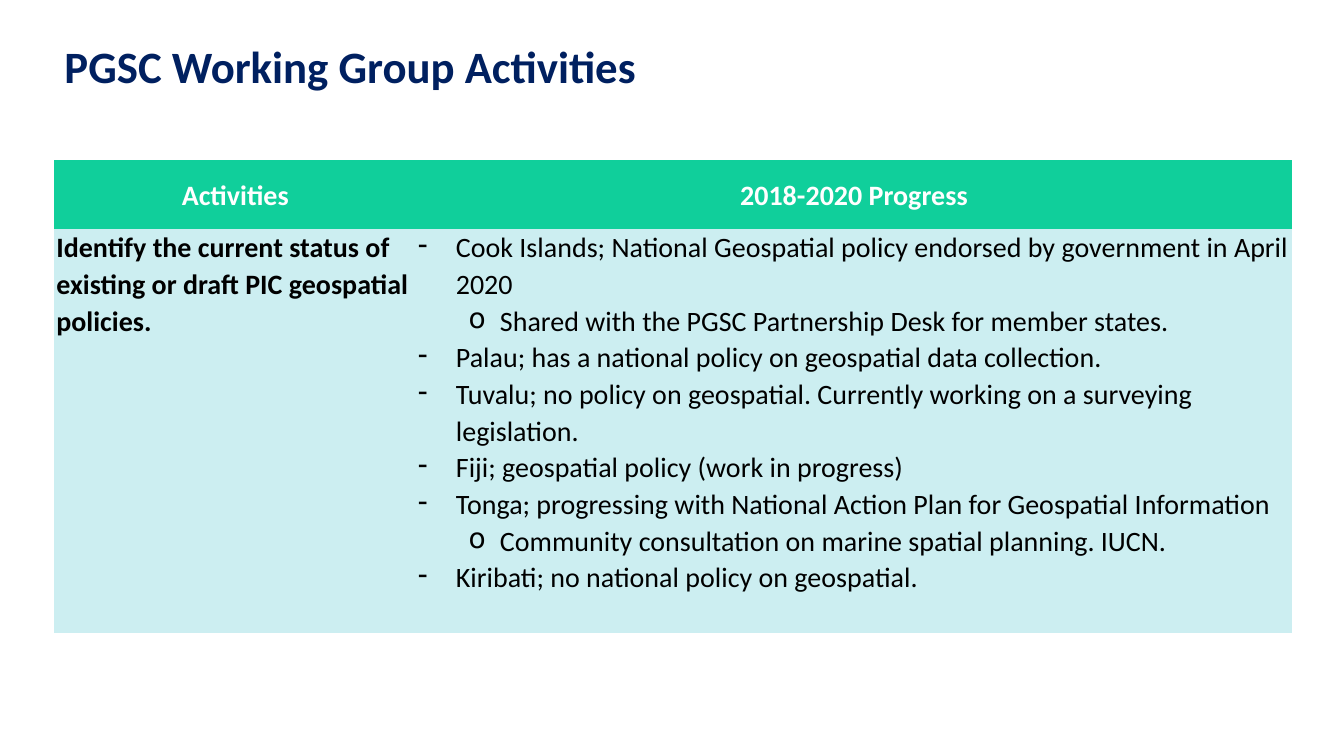
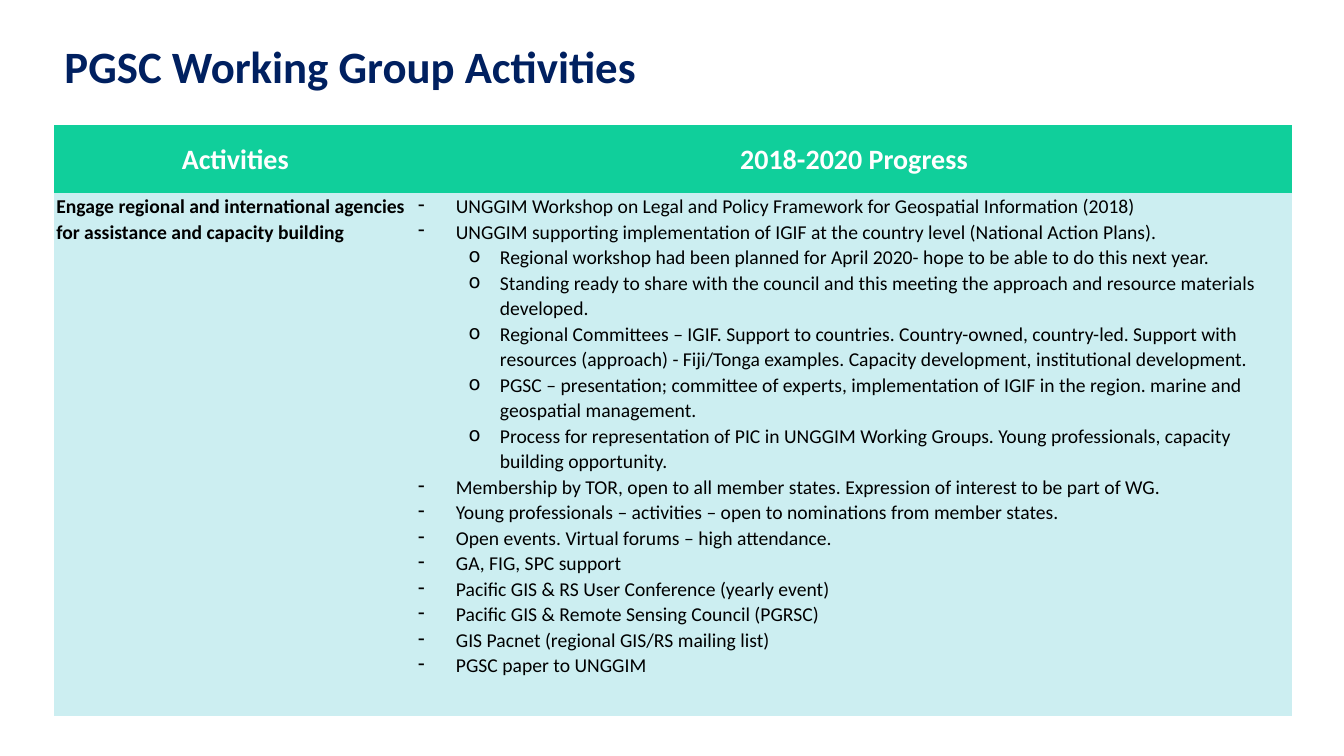
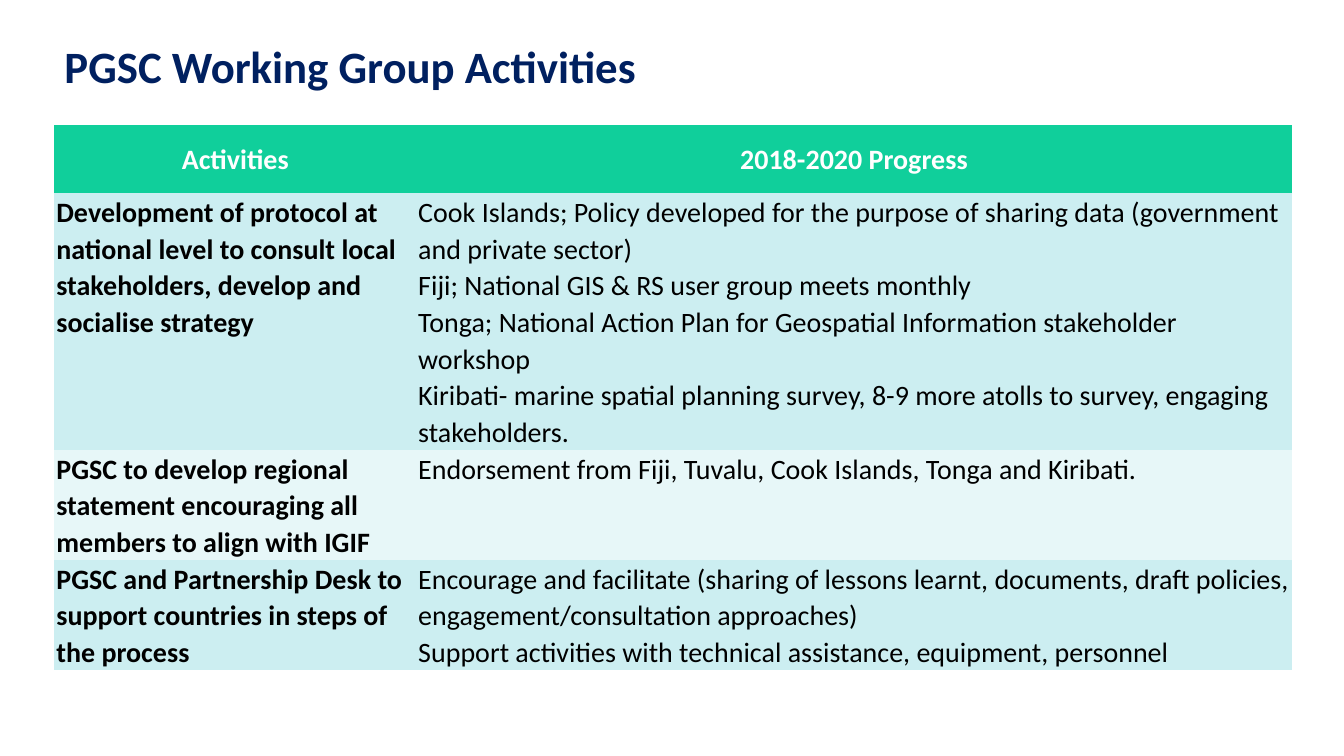
from dataclasses import dataclass
from typing import NamedTuple, Optional

from lxml.etree import SubElement
from pptx import Presentation
from pptx.dml.color import RGBColor
from pptx.enum.text import MSO_ANCHOR as Anchor, MSO_AUTO_SIZE as Fit, PP_ALIGN as Align
from pptx.oxml.ns import qn
from pptx.util import Cm, Pt

FONT = "Calibri"
NAVY, GREEN, WHITE, BLACK = "002060", "10CF9B", "FFFFFF", "000000"
BANDS = ("CCEEF1", "E7F7F8")
PLAIN = "{2D5ABB26-0587-4C30-8999-92F81FD0307C}"
TITLE = "PGSC Working Group Activities"
HEADS = ("Activities", "2018-2020 Progress")
LEFT, WIDTHS, HEAD = 1.37, (9.12, 22.07), 1.72


class Mark(NamedTuple):
    """A bullet sign with its indents in centimetres."""
    sign: str
    level: int
    left: float
    hang: float


DASH = Mark("-", 0, 0.95, 0.95)
RING = Mark("o", 1, 2.06, 0.79)


class Line(NamedTuple):
    """One paragraph of a cell."""
    text: str
    mark: Optional[Mark] = None


@dataclass
class Row:
    """An activity, its progress and the row height."""
    task: str
    lines: list[Line]
    height: float


@dataclass
class Page:
    """One slide: table top, body text size and rows."""
    top: float
    size: int
    rows: list[Row]


PAGES = [
    Page(4.04, 20, [
        Row("Identify the current status of existing or draft PIC geospatial policies.", [
            Line("Cook Islands; National Geospatial policy endorsed by government in April 2020", DASH),
            Line("Shared with the PGSC Partnership Desk for member states.", RING),
            Line("Palau; has a national policy on geospatial data collection.", DASH),
            Line("Tuvalu; no policy on geospatial. Currently working on a surveying legislation.", DASH),
            Line("Fiji; geospatial policy (work in progress)", DASH),
            Line("Tonga; progressing with National Action Plan for Geospatial Information", DASH),
            Line("Community consultation on marine spatial planning. IUCN.", RING),
            Line("Kiribati; no national policy on geospatial.", DASH),
        ], 10.18),
    ]),
    Page(3.15, 14, [
        Row("Engage regional and international agencies for assistance and capacity building", [
            Line("UNGGIM Workshop on Legal and Policy Framework for Geospatial Information (2018)", DASH),
            Line("UNGGIM supporting implementation of IGIF at the country level "
                 "(National Action Plans).", DASH),
            Line("Regional workshop had been planned for April 2020- "
                 "hope to be able to do this next year.", RING),
            Line("Standing ready to share with the council and this meeting the approach "
                 "and resource materials developed.", RING),
            Line("Regional Committees – IGIF. Support to countries. Country-owned, country-led. "
                 "Support with resources (approach) - Fiji/Tonga examples. "
                 "Capacity development, institutional development.", RING),
            Line("PGSC – presentation; committee of experts, implementation of IGIF in the region. "
                 "marine and geospatial management.", RING),
            Line("Process for representation of PIC in UNGGIM Working Groups. "
                 "Young professionals, capacity building opportunity.", RING),
            Line("Membership by TOR, open to all member states. "
                 "Expression of interest to be part of WG.", DASH),
            Line("Young professionals – activities – open to nominations from member states.", DASH),
            Line("Open events. Virtual forums – high attendance.", DASH),
            Line("GA, FIG, SPC support", DASH),
            Line("Pacific GIS & RS User Conference (yearly event)", DASH),
            Line("Pacific GIS & Remote Sensing Council (PGRSC)", DASH),
            Line("GIS Pacnet (regional GIS/RS mailing list)", DASH),
            Line("PGSC paper to UNGGIM", DASH),
        ], 13.16),
    ]),
    Page(3.15, 20, [
        Row("Development of protocol at national level to consult local stakeholders, "
            "develop and socialise strategy", [
                Line("Cook Islands; Policy developed for the purpose of sharing data "
                     "(government and private sector)"),
                Line("Fiji; National GIS & RS user group meets monthly"),
                Line("Tonga; National Action Plan for Geospatial Information stakeholder workshop"),
                Line("Kiribati- marine spatial planning survey, 8-9 more atolls to survey, "
                     "engaging stakeholders."),
            ], 6.47),
        Row("PGSC to develop regional statement encouraging all members to align with IGIF", [
            Line("Endorsement from Fiji, Tuvalu, Cook Islands, Tonga and Kiribati."),
        ], 2.77),
        Row("PGSC and Partnership Desk to support countries in steps of the process", [
            Line("Encourage and facilitate (sharing of lessons learnt, documents, draft policies, "
                 "engagement/consultation approaches)"),
            Line("Support activities with technical assistance, equipment, personnel"),
        ], 2.77),
    ]),
]


def tint(hue: str) -> RGBColor:
    """Turn a hex string into a colour."""
    return RGBColor.from_string(hue)


def style(para, size: int, hue: str, bold: bool) -> None:
    """Set the font of every run in a paragraph."""
    for run in para.runs:
        font = run.font
        font.name, font.size, font.bold = FONT, Pt(size), bold
        font.color.rgb = tint(hue)


def bullet(para, mark: Mark) -> None:
    """Give a paragraph a hanging bullet."""
    para.level = mark.level
    props = para._p.get_or_add_pPr()
    props.set("marL", str(Cm(mark.left)))
    props.set("indent", str(-Cm(mark.hang)))
    SubElement(props, qn("a:buChar")).set("char", mark.sign)


def fill(cell, lines: list[Line], size: int, back: str, hue: str = BLACK,
         bold: bool = False, head: bool = False) -> None:
    """Write the lines into a cell and colour it."""
    cell.fill.solid()
    cell.fill.fore_color.rgb = tint(back)
    cell.margin_left = cell.margin_right = Cm(0.05)
    cell.margin_top = cell.margin_bottom = 0
    cell.vertical_anchor = Anchor.MIDDLE if head else Anchor.TOP
    frame = cell.text_frame
    frame.text = "\n".join(line.text for line in lines)
    for para, line in zip(frame.paragraphs, lines):
        if line.mark:
            bullet(para, line.mark)
        para.line_spacing = 1.07
        para.alignment = Align.CENTER if head else Align.LEFT
        style(para, size, hue, bold)


def add_title(slide) -> None:
    """Place and format the slide title."""
    title = slide.shapes.title
    title.left, title.top, title.width, title.height = Cm(LEFT), Cm(1), Cm(26.67), Cm(2.92)
    frame = title.text_frame
    frame.text = TITLE
    frame.auto_size, frame.word_wrap = Fit.NONE, True
    frame.vertical_anchor = Anchor.TOP
    para = frame.paragraphs[0]
    para.alignment, para.line_spacing = Align.LEFT, 0.9
    style(para, 32, NAVY, True)


def add_grid(slide, page: Page) -> None:
    """Draw the activity table of a page."""
    highs = [HEAD] + [row.height for row in page.rows]
    frame = slide.shapes.add_table(len(highs), len(WIDTHS), Cm(LEFT), Cm(page.top),
                                   Cm(sum(WIDTHS)), Cm(sum(highs)))
    grid = frame.table
    for node in grid._tbl.iter(qn("a:tableStyleId")):
        node.text = PLAIN
    for col, width in zip(grid.columns, WIDTHS):
        col.width = Cm(width)
    for row, high in zip(grid.rows, highs):
        row.height = Cm(high)
    for col, text in enumerate(HEADS):
        fill(grid.cell(0, col), [Line(text)], 20, GREEN, WHITE, bold=True, head=True)
    for num, row in enumerate(page.rows):
        back = BANDS[num % 2]
        fill(grid.cell(num + 1, 0), [Line(row.task)], page.size, back, bold=True)
        fill(grid.cell(num + 1, 1), row.lines, page.size, back)


def main() -> None:
    """Build and save the deck."""
    deck = Presentation()
    deck.slide_width, deck.slide_height = Cm(33.87), Cm(19.05)
    for page in PAGES:
        slide = deck.slides.add_slide(deck.slide_layouts[5])
        add_title(slide)
        add_grid(slide, page)
    deck.save("out.pptx")


if __name__ == "__main__":
    main()
